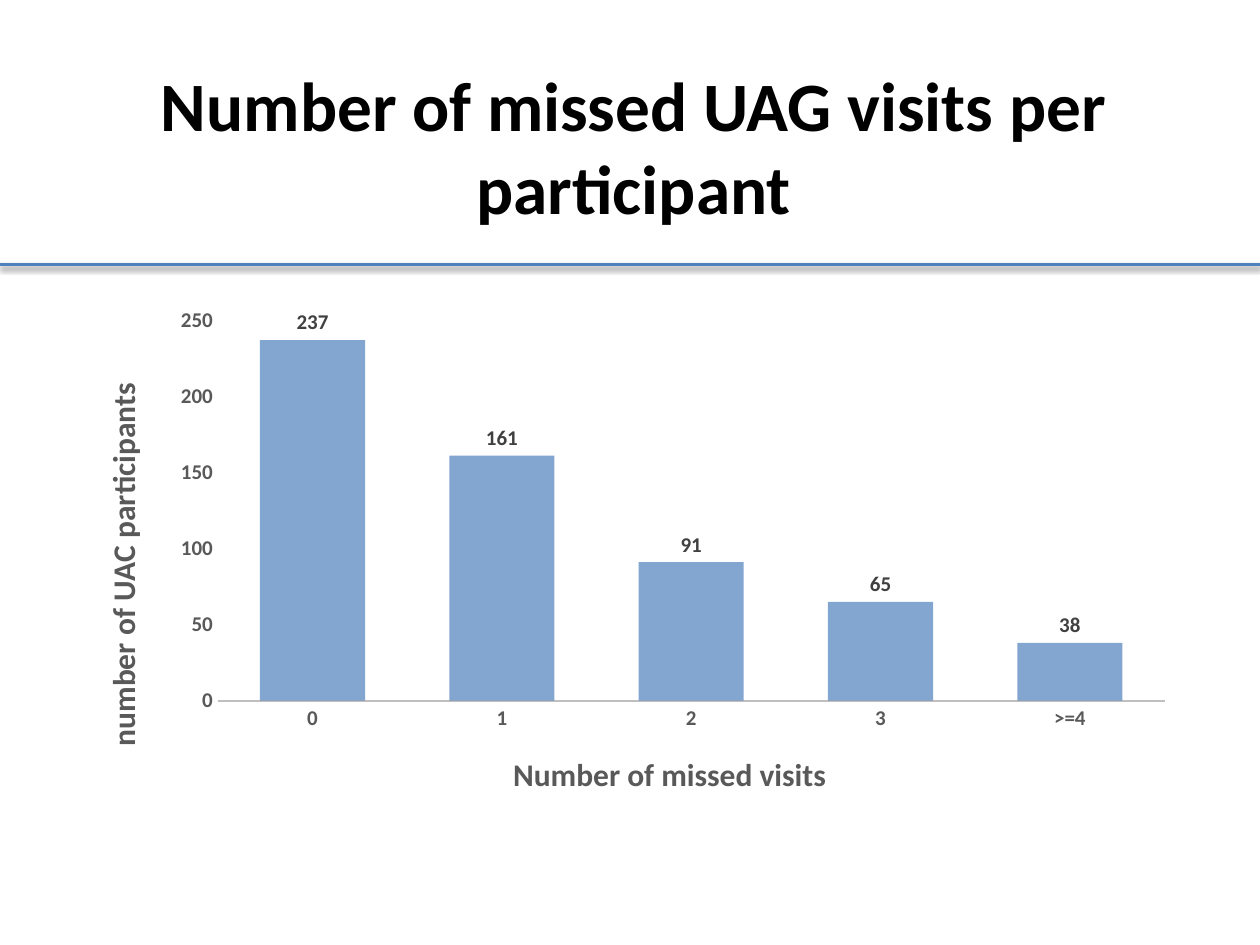
from dataclasses import dataclass

from lxml import etree
from pptx import Presentation
from pptx.chart.data import CategoryChartData
from pptx.dml.color import RGBColor
from pptx.enum import chart as ch, shapes, text
from pptx.oxml import parse_xml
from pptx.oxml.ns import nsdecls, qn
from pptx.util import Inches, Pt


@dataclass(frozen=True)
class Theme:
    font: str = "Calibri"
    ink: str = "000000"
    accent: str = "4F81BD"
    axis_text: str = "595959"
    axis_line: str = "BFBFBF"
    label_text: str = "404040"
    title_size: float = 39.6
    axis_title_size: float = 18
    axis_size: float = 12
    chart_size: float = 10


THEME = Theme()
MISSED_VISITS = {"0": 237, "1": 161, "2": 91, "3": 65, ">=4": 38}


def style_font(font, size, color, bold=True):
    values = {"name": THEME.font, "size": Pt(size), "bold": bold}
    for name, value in values.items():
        setattr(font, name, value)
    font.color.rgb = RGBColor.from_string(color)


def add_title(slide, wording):
    title = slide.shapes.title
    place = {"left": 0.64, "top": 0.61, "width": 8.78, "height": 1.09}
    for name, value in place.items():
        setattr(title, name, Inches(value))
    frame = title.text_frame
    frame.text = wording
    frame.word_wrap = True
    frame.auto_size = text.MSO_AUTO_SIZE.NONE
    frame.vertical_anchor = text.MSO_ANCHOR.MIDDLE
    paragraph = frame.paragraphs[0]
    paragraph.alignment = text.PP_ALIGN.CENTER
    style_font(paragraph.runs[0].font, THEME.title_size, THEME.ink)


def add_divider(slide, top):
    """Draw a full-width rule with a soft shadow below it."""
    divider = slide.shapes.add_connector(
        shapes.MSO_CONNECTOR.STRAIGHT, 0, Inches(top), Inches(10), Inches(top))
    divider.line.color.rgb = RGBColor.from_string(THEME.accent)
    divider.line.width = Pt(2)
    divider._element.spPr.append(parse_xml(
        f'<a:effectLst {nsdecls("a")}>'
        f'<a:outerShdw blurRad="{Pt(3.1)}" dist="{Pt(1.6)}" dir="5400000" rotWithShape="0">'
        f'<a:srgbClr val="{THEME.ink}"><a:alpha val="38000"/></a:srgbClr>'
        '</a:outerShdw></a:effectLst>'))


def set_layout(element, index, **settings):
    """Place a chart part by fractions of the chart's size."""
    for old in element.findall(qn("c:layout")):
        element.remove(old)
    layout = etree.Element(qn("c:layout"))
    manual = etree.SubElement(layout, qn("c:manualLayout"))
    for name, value in settings.items():
        etree.SubElement(manual, qn(f"c:{name}")).set("val", str(value))
    element.insert(index, layout)


def style_axis(axis, title, x, y):
    axis.has_major_gridlines = False
    axis.major_tick_mark = axis.minor_tick_mark = ch.XL_TICK_MARK.NONE
    style_font(axis.tick_labels.font, THEME.axis_size, THEME.axis_text)
    frame = axis.axis_title.text_frame
    frame.text = title
    style_font(frame.paragraphs[0].runs[0].font, THEME.axis_title_size, THEME.axis_text)
    set_layout(axis.axis_title._element, 1, xMode="edge", yMode="edge", x=x, y=y)


def style_columns(plot):
    formats = {"gap_width": 80, "overlap": 25, "vary_by_categories": False,
               "has_data_labels": True}
    for name, value in formats.items():
        setattr(plot, name, value)
    fill = plot.series[0].format.fill
    fill.solid()
    fill.fore_color.rgb = RGBColor.from_string(THEME.accent)
    color = plot.series[0]._element.find(".//" + qn("a:srgbClr"))
    etree.SubElement(color, qn("a:alpha")).set("val", "70000")
    labels = plot.data_labels
    labels.show_value = True
    labels.position = ch.XL_LABEL_POSITION.OUTSIDE_END
    style_font(labels.font, THEME.axis_size, THEME.label_text)


def add_visits_chart(slide):
    data = CategoryChartData()
    data.categories = list(MISSED_VISITS)
    data.add_series("Series 1", list(MISSED_VISITS.values()))
    place = [Inches(value) for value in (0.58, 2.38, 8.84, 4.08)]
    chart = slide.shapes.add_chart(
        ch.XL_CHART_TYPE.COLUMN_CLUSTERED, *place, data).chart
    chart.has_title = chart.has_legend = False
    style_font(chart.font, THEME.chart_size, THEME.ink, bold=False)

    visits, participants = chart.category_axis, chart.value_axis
    style_axis(visits, "Number of missed visits", 0.39, 0.87)
    visits.format.line.color.rgb = RGBColor.from_string(THEME.axis_line)
    visits.format.line.width = Pt(1.25)
    style_axis(participants, "number of UAC participants", 0.02, 0.15)
    participants.format.line.fill.background()
    scale = {"minimum_scale": 0, "maximum_scale": 250, "major_unit": 50}
    for name, value in scale.items():
        setattr(participants, name, value)

    style_columns(chart.plots[0])
    plot_area = chart._chartSpace.find(".//" + qn("c:plotArea"))
    set_layout(plot_area, 0, layoutTarget="inner", xMode="edge", yMode="edge",
               x=0.13, y=0.04, w=0.85, h=0.74)


def main():
    deck = Presentation()
    deck.slide_width, deck.slide_height = Inches(10), Inches(7.5)
    slide = deck.slides.add_slide(deck.slide_layouts.get_by_name("Title Only"))
    add_title(slide, "Number of missed UAG visits per participant")
    add_divider(slide, 2.1)
    add_visits_chart(slide)
    deck.save("out.pptx")


if __name__ == "__main__":
    main()
